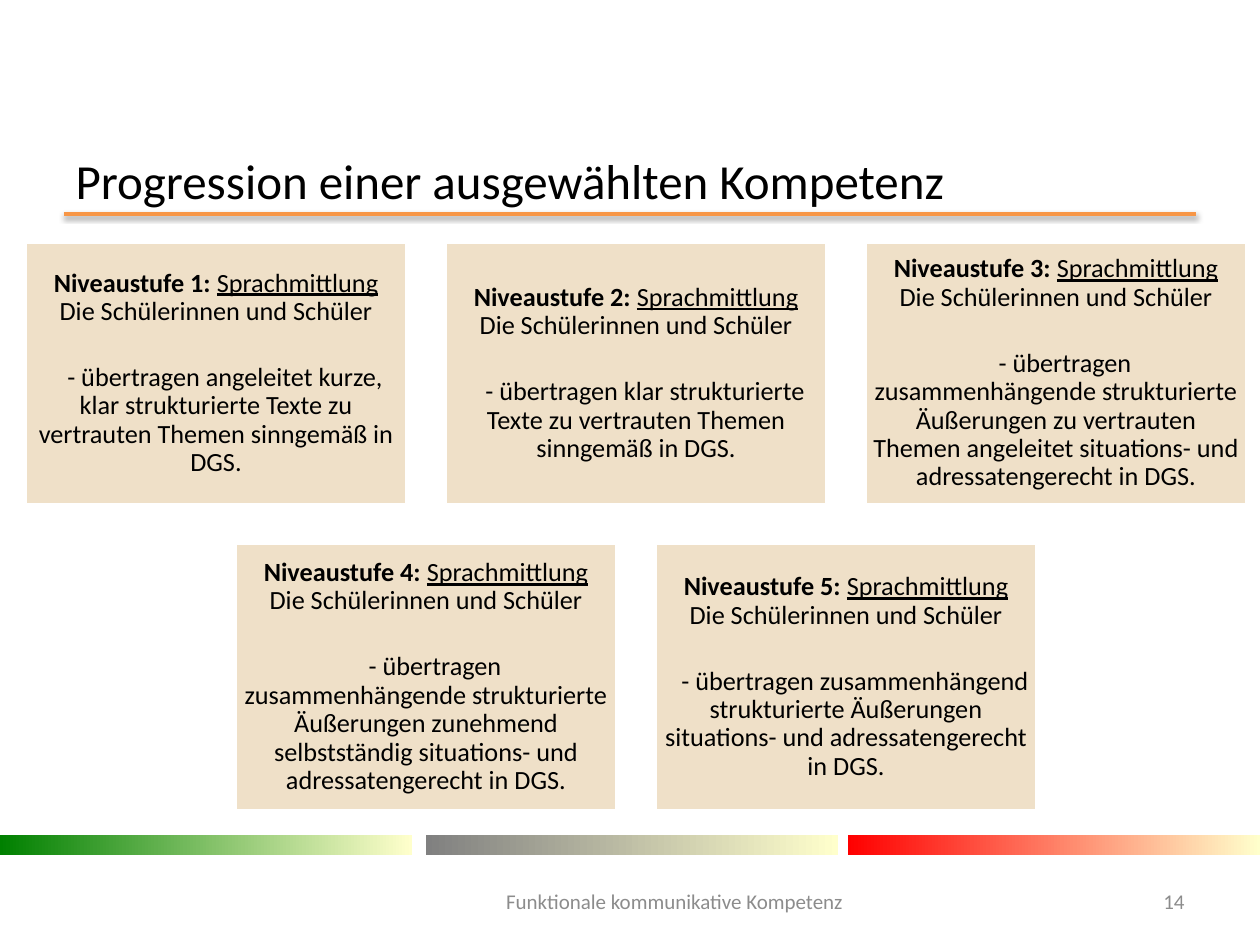
from lxml import etree
from pptx import Presentation
from pptx import util as u
from pptx.dml.color import RGBColor
from pptx.enum import shapes, text
from pptx.oxml import parse_xml
from pptx.oxml.ns import nsdecls, qn

TITLE = "Progression einer ausgewählten Kompetenz"
SKILL = "Sprachmittlung"
SUBJECT = "Die Schülerinnen und Schüler"
LEVELS = [
    "übertragen angeleitet kurze, klar strukturierte Texte zu vertrauten Themen "
    "sinngemäß in DGS.",
    "übertragen klar strukturierte Texte zu vertrauten Themen sinngemäß in DGS.",
    "übertragen zusammenhängende strukturierte Äußerungen zu vertrauten Themen "
    "angeleitet situations- und adressatengerecht in DGS.",
    "übertragen zusammenhängende strukturierte Äußerungen zunehmend selbstständig "
    "situations- und adressatengerecht in DGS.",
    "übertragen zusammenhängend strukturierte Äußerungen situations- und "
    "adressatengerecht in DGS.",
]
BLACK = RGBColor(0x00, 0x00, 0x00)
WHITE = RGBColor(0xFF, 0xFF, 0xFF)
GREY = RGBColor(0x8C, 0x8C, 0x8C)
SAND = RGBColor(0xEF, 0xE0, 0xC8)
ORANGE = RGBColor(0xF7, 0x96, 0x46)
CREAM = RGBColor(0xFF, 0xFF, 0xCC)

# left and starting colour of each gradient bar
BARS = [(0, RGBColor(0x00, 0x80, 0x00)), (426, RGBColor(0x80, 0x80, 0x80)),
        (848, RGBColor(0xFF, 0x00, 0x00))]
# text, left, width, alignment
FOOTER = [("Funktionale kommunikative Kompetenz", 471, 407, text.PP_ALIGN.CENTER),
          ("14", 1116, 81, text.PP_ALIGN.RIGHT)]
COLUMNS, PITCH, LEFT, CARD_W = 3, 420, 25, 382
ROWS = [(242, 263), (543, 268)]  # top, height

SHADOW = (f'<a:effectLst {nsdecls("a")}><a:outerShdw blurRad="40000" dist="20000" '
          'dir="5400000" rotWithShape="0"><a:srgbClr val="000000">'
          '<a:alpha val="38000"/></a:srgbClr></a:outerShdw></a:effectLst>')


def px(n):
    return u.Emu(round(n * 914400 / 126))


def style(font, size, color, **values):
    for name, value in dict(name="Calibri", size=u.Pt(size), **values).items():
        setattr(font, name, value)
    font.color.rgb = color


def add_rect(s, *box):
    sp = s.shapes.add_shape(shapes.MSO_SHAPE.RECTANGLE, *map(px, box))
    sp.shadow.inherit = False
    return sp


def add_card(s, number, task, *box):
    sp = add_rect(s, *box)
    sp.fill.solid()
    sp.fill.fore_color.rgb = SAND
    sp.line.color.rgb = WHITE
    sp.line.width = u.Pt(2)
    tf = sp.text_frame
    tf.word_wrap = True
    tf.vertical_anchor = text.MSO_ANCHOR.MIDDLE
    for side in ("left", "right", "top", "bottom"):
        setattr(tf, f"margin_{side}", px(8))
    head, body = tf.paragraphs[0], tf.add_paragraph()
    for p in (head, body):
        p.alignment = text.PP_ALIGN.CENTER
        p.line_spacing = 0.9
    for words, values in ((f"Niveaustufe {number}: ", {"bold": True}),
                          (SKILL, {"underline": True}), (SUBJECT, {})):
        if words == SUBJECT:
            head.add_line_break()
        r = head.add_run()
        r.text = words
        style(r.font, 15, BLACK, **values)
    for br in head._p.findall(qn("a:br")):
        etree.SubElement(br, qn("a:rPr"), sz="1500")
    body.space_before = u.Pt(21.5)
    body._p.get_or_add_pPr().set("indent", str(px(18)))
    r = body.add_run()
    r.text = f"- {task}"
    style(r.font, 15, BLACK)


def main():
    prs = Presentation()
    prs.slide_width, prs.slide_height = px(1260), px(945)
    s = prs.slides.add_slide(prs.slide_layouts[5])

    # Title and the rule below it
    title = s.shapes.title
    title.left, title.top, title.width, title.height = map(px, (63, 155, 1134, 49))
    tf = title.text_frame
    tf.text = TITLE
    tf.vertical_anchor = text.MSO_ANCHOR.MIDDLE
    tf.paragraphs[0].alignment = text.PP_ALIGN.LEFT
    style(tf.paragraphs[0].runs[0].font, 28, BLACK)
    rule = s.shapes.add_connector(shapes.MSO_CONNECTOR.STRAIGHT,
                                  *map(px, (64, 214, 1196, 214)))
    rule.line.color.rgb = ORANGE
    rule.line.width = u.Pt(2)
    rule._element.spPr.append(parse_xml(SHADOW))

    # Gradient bars
    for left, color in BARS:
        bar = add_rect(s, left, 835, 412, 20)
        bar.line.fill.background()
        bar.fill.gradient()
        bar.fill.gradient_angle = 0
        for stop, rgb in zip(bar.fill.gradient_stops, (color, CREAM)):
            stop.color.rgb = rgb

    # Level cards, each row centred on the same axis
    for i, task in enumerate(LEVELS):
        row, col = divmod(i, COLUMNS)
        count = min(COLUMNS, len(LEVELS) - row * COLUMNS)
        left = LEFT + (COLUMNS - count) * PITCH // 2 + col * PITCH
        top, height = ROWS[row]
        add_card(s, i + 1, task, left, top, CARD_W, height)

    # Footer and page number
    for words, left, width, align in FOOTER:
        tf = s.shapes.add_textbox(*map(px, (left, 876, width, 50))).text_frame
        tf.word_wrap = True
        tf.vertical_anchor = text.MSO_ANCHOR.MIDDLE
        tf.text = words
        p = tf.paragraphs[0]
        p.alignment = align
        style(p.runs[0].font, 12, GREY)

    prs.save("out.pptx")


if __name__ == "__main__":
    main()
